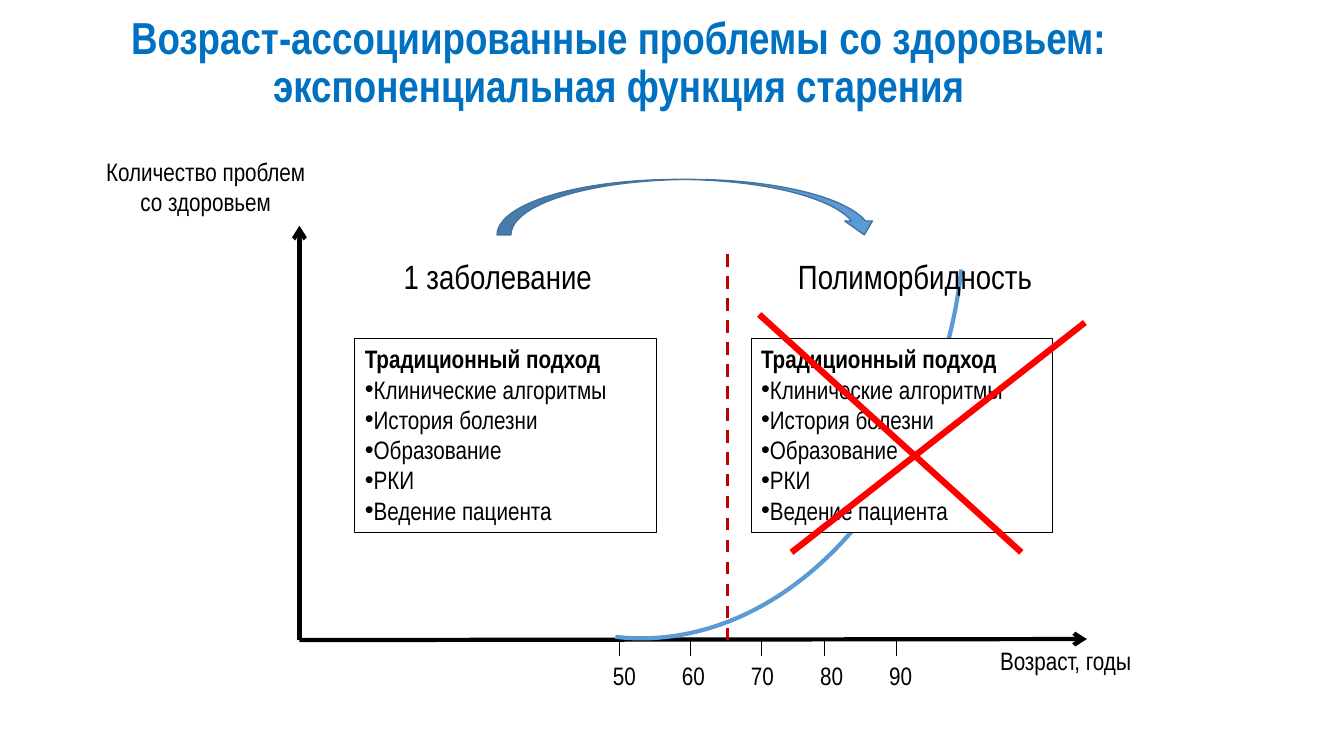
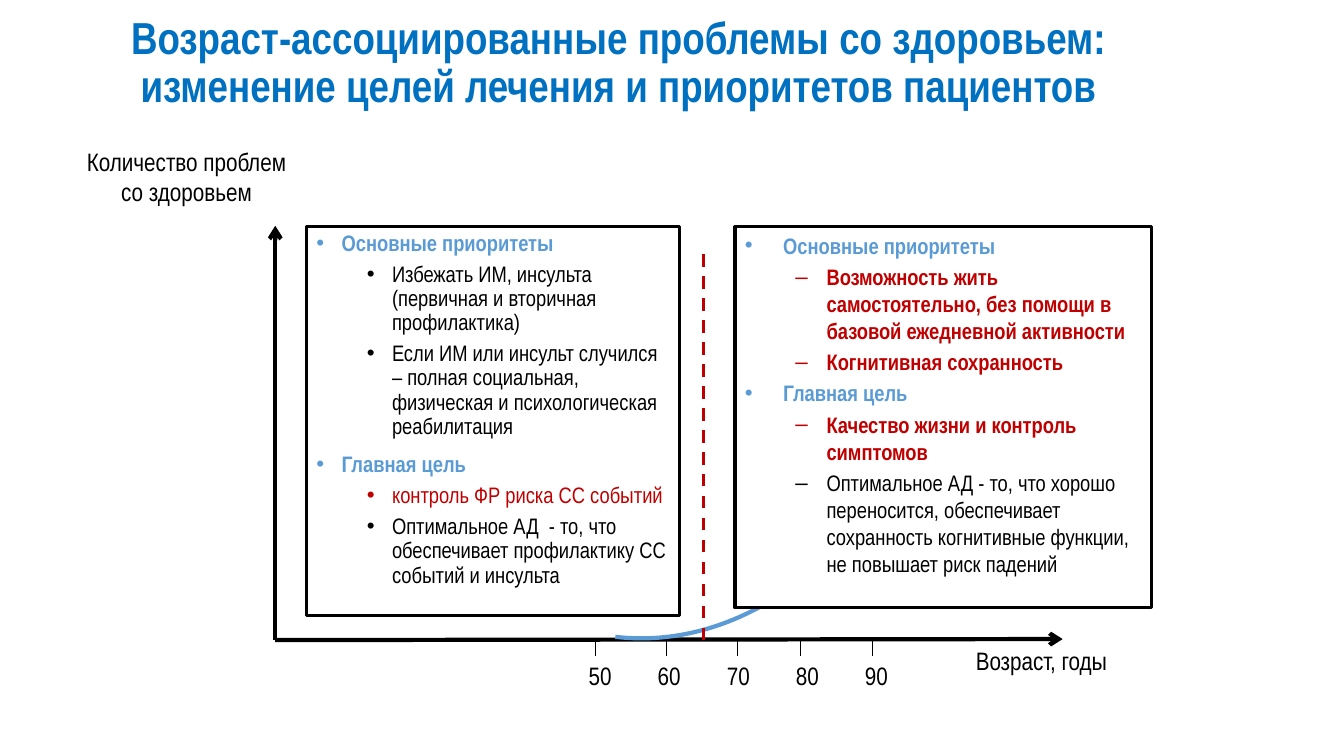
"""Build two slides on age-related health problems and treatment goals."""
import lxml.etree
import pptx
import pptx.dml.color
import pptx.enum.dml
import pptx.enum.shapes
import pptx.enum.text
import pptx.oxml.ns
import pptx.util

Inches, Pt = pptx.util.Inches, pptx.util.Pt
SHAPE = pptx.enum.shapes.MSO_SHAPE
ALIGN = pptx.enum.text.PP_ALIGN
qn = pptx.oxml.ns.qn

FONT = "Arial Narrow"
BLACK, WHITE, RED, DARK_RED = "000000", "FFFFFF", "FF0000", "C00000"
TITLE_BLUE, BLUE, DARK_BLUE = "0070C0", "5B9BD5", "43739E"

TITLE_START = "Возраст-ассоциированные проблемы со здоровьем: "
TITLES = [
    TITLE_START + "экспоненциальная функция старения",
    TITLE_START + "изменение целей лечения и приоритетов пациентов",
]
PROBLEMS_LABEL = "Количество проблем со здоровьем"
AGE_LABEL = "Возраст, годы"
AGES = ["50", "60", "70", "80", "90"]
TICK_OFFSETS = [3.17, 3.88, 4.58, 5.21, 5.92]
AGE_STEP = 0.685
AXIS_Y = 6.35

STAGES = [("1 заболевание", 3.44, 2.99), ("Полиморбидность", 7.45, 3.25)]
APPROACH = [
    "Традиционный подход",
    "Клинические алгоритмы",
    "История болезни",
    "Образование",
    "РКИ",
    "Ведение пациента",
]
CROSS = [((7.53, 3.12), (10.13, 5.48)), ((7.85, 5.48), (10.76, 3.2))]

PRIORITIES, GOAL = "Основные приоритеты", "Главная цель"
GOAL_PANELS = [
    {
        "box": (3.04, 2.25, 3.7, 3.86),
        "bullets": "••",
        "indents": [(0.25, -0.25), (0.75, -0.25)],
        "space_before": (10, 5),
        "line_spacing": 0.9,
        "items": [
            (0, PRIORITIES, BLUE, True),
            (1, "Избежать ИМ, инсульта (первичная и вторичная профилактика)", BLACK, False),
            (1, "Если ИМ или инсульт случился – полная социальная, физическая "
                "и психологическая реабилитация", BLACK, False),
            (0, GOAL, BLUE, True),
            (1, "контроль ФР риска СС событий", DARK_RED, False),
            (1, "Оптимальное АД  - то, что обеспечивает профилактику СС событий "
                "и инсульта", BLACK, False),
        ],
    },
    {
        "box": (7.29, 2.25, 4.13, 3.78),
        "bullets": "•–",
        "indents": [(0.38, -0.38), (0.81, -0.31)],
        "space_before": (3.2, 3.2),
        "line_spacing": 1.0,
        "items": [
            (0, PRIORITIES, BLUE, True),
            (1, "Возможность жить самостоятельно, без помощи в базовой ежедневной "
                "активности", DARK_RED, True),
            (1, "Когнитивная сохранность", DARK_RED, True),
            (0, GOAL, BLUE, True),
            (1, "Качество жизни и контроль симптомов", DARK_RED, True),
            (1, "Оптимальное АД - то, что хорошо переносится, обеспечивает сохранность "
                "когнитивные функции, не повышает риск падений", BLACK, False),
        ],
    },
]


def color(value):
    return pptx.dml.color.RGBColor.from_string(value)


def add_child(parent, tag, **attributes):
    return lxml.etree.SubElement(parent, qn(tag), attributes)


def set_font(paragraph, size, text_color=BLACK, bold=False):
    font = paragraph.font
    font.name, font.size, font.bold = FONT, Pt(size), bold
    font.color.rgb = color(text_color)


def set_bullet(paragraph, character, left=0, hanging=0):
    properties = paragraph._p.get_or_add_pPr()
    properties.set("marL", str(Inches(left)))
    properties.set("indent", str(Inches(hanging)))
    add_child(properties, "a:buFont", typeface="Arial")
    add_child(properties, "a:buChar", char=character)


def add_label(slide, text, box, size=18, align=ALIGN.LEFT, tabs=()):
    shape = slide.shapes.add_textbox(*map(Inches, box))
    frame = shape.text_frame
    frame.word_wrap = True
    paragraph = frame.paragraphs[0]
    paragraph.text = text
    paragraph.alignment = align
    if tabs:
        tab_list = add_child(paragraph._p.get_or_add_pPr(), "a:tabLst")
        for position in tabs:
            add_child(tab_list, "a:tab", pos=str(Inches(position)), algn="l")
    set_font(paragraph, size)
    return shape


def add_title(slide, text):
    frame = add_label(slide, text, (0.9, 0.01, 10.48, 1.25), 32, ALIGN.CENTER).text_frame
    frame.vertical_anchor = pptx.enum.text.MSO_ANCHOR.MIDDLE
    frame.paragraphs[0].line_spacing = 0.9
    set_font(frame.paragraphs[0], 32, TITLE_BLUE, True)


def add_line(shapes, start, end, line_color, width, dashed=False, arrow=False):
    connector = shapes.add_connector(
        pptx.enum.shapes.MSO_CONNECTOR.STRAIGHT, *map(Inches, start + end))
    connector.line.color.rgb = color(line_color)
    connector.line.width = Pt(width)
    if dashed:
        connector.line.dash_style = pptx.enum.dml.MSO_LINE.DASH
    properties = connector._element.spPr
    if arrow:
        add_child(properties.find(qn("a:ln")), "a:tailEnd", type="arrow")
    add_child(properties, "a:effectLst")


def add_figure(shapes, kind, box, line_color, width, fill=None):
    shape = shapes.add_shape(kind, *map(Inches, box))
    shape.shadow.inherit = False
    if fill:
        shape.fill.solid()
        shape.fill.fore_color.rgb = color(fill)
    else:
        shape.fill.background()
    shape.line.color.rgb = color(line_color)
    shape.line.width = Pt(width)
    return shape


def fill_frame(shape, count):
    frame = shape.text_frame
    frame.word_wrap = True
    frame.vertical_anchor = pptx.enum.text.MSO_ANCHOR.TOP
    for _ in range(count - 1):
        frame.add_paragraph()
    for paragraph in frame.paragraphs:
        paragraph.alignment = ALIGN.LEFT
    return frame.paragraphs


def add_age_chart(slide, origin, problems_at):
    shapes = slide.shapes
    corner = (origin, AXIS_Y)
    add_line(shapes, corner, (origin, 2.24), BLACK, 3, arrow=True)
    add_line(shapes, corner, (origin + 7.81, 6.34), BLACK, 3, arrow=True)
    curve = add_figure(shapes, SHAPE.ARC, (2.55, -0.66, 8.03, 5.98), BLUE, 3)
    curve.rotation = 96.6
    add_label(slide, PROBLEMS_LABEL, problems_at + (2.28, 0.71), align=ALIGN.CENTER)
    add_label(slide, AGE_LABEL, (origin + 6.85, AXIS_Y, 2.76, 0.4))
    tabs = [AGE_STEP * number for number in range(1, len(AGES))]
    add_label(slide, "\t".join(AGES), (origin + 3.01, 6.5, 3.39, 0.4), tabs=tabs)
    for offset in TICK_OFFSETS:
        tick = origin + offset
        add_line(shapes, (tick, AXIS_Y), (tick, 6.51), BLACK, 0.5)
    threshold = origin + 4.25
    add_line(shapes, (threshold, AXIS_Y), (threshold, 2.49), DARK_RED, 2.25, dashed=True)


def add_approach(shapes, left, fill=None):
    shape = add_figure(shapes, SHAPE.RECTANGLE, (left, 3.36, 2.99, 1.92), BLACK, 0.75, fill)
    for number, paragraph in enumerate(fill_frame(shape, len(APPROACH))):
        paragraph.text = APPROACH[number]
        if number:
            set_bullet(paragraph, "•")
        set_font(paragraph, 18, bold=number == 0)


def add_goal_panel(slide, panel):
    shape = add_figure(slide.shapes, SHAPE.RECTANGLE, panel["box"], BLACK, 2.25, WHITE)
    paragraphs = fill_frame(shape, len(panel["items"]))
    for number, (level, text, text_color, bold) in enumerate(panel["items"]):
        paragraph = paragraphs[number]
        paragraph.text = text
        paragraph.level = level
        paragraph.line_spacing = panel["line_spacing"]
        if number:
            paragraph.space_before = Pt(panel["space_before"][level])
        set_bullet(paragraph, panel["bullets"][level], *panel["indents"][level])
        set_font(paragraph, 16, text_color, bold)


def build_function_slide(slide):
    add_title(slide, TITLES[0])
    add_age_chart(slide, 2.97, (0.9, 1.5))
    add_approach(slide.shapes, 3.52)
    for text, left, width in STAGES:
        add_label(slide, text, (left, 2.49, width, 0.5), 24, ALIGN.CENTER)
    crossed_out = slide.shapes.add_group_shape().shapes
    add_approach(crossed_out, 7.45, WHITE)
    for start, end in CROSS:
        add_line(crossed_out, start, end, RED, 4.5)
    add_figure(slide.shapes, SHAPE.CURVED_DOWN_ARROW, (4.93, 1.78, 3.78, 0.55),
               DARK_BLUE, 1, BLUE)


def build_goals_slide(slide):
    add_title(slide, TITLES[1])
    add_age_chart(slide, 2.73, (0.71, 1.4))
    for panel in GOAL_PANELS:
        add_goal_panel(slide, panel)


def main():
    presentation = pptx.Presentation()
    presentation.slide_width, presentation.slide_height = Inches(13.33), Inches(7.5)
    for build in (build_function_slide, build_goals_slide):
        build(presentation.slides.add_slide(presentation.slide_layouts[6]))
    presentation.save("out.pptx")


if __name__ == "__main__":
    main()
